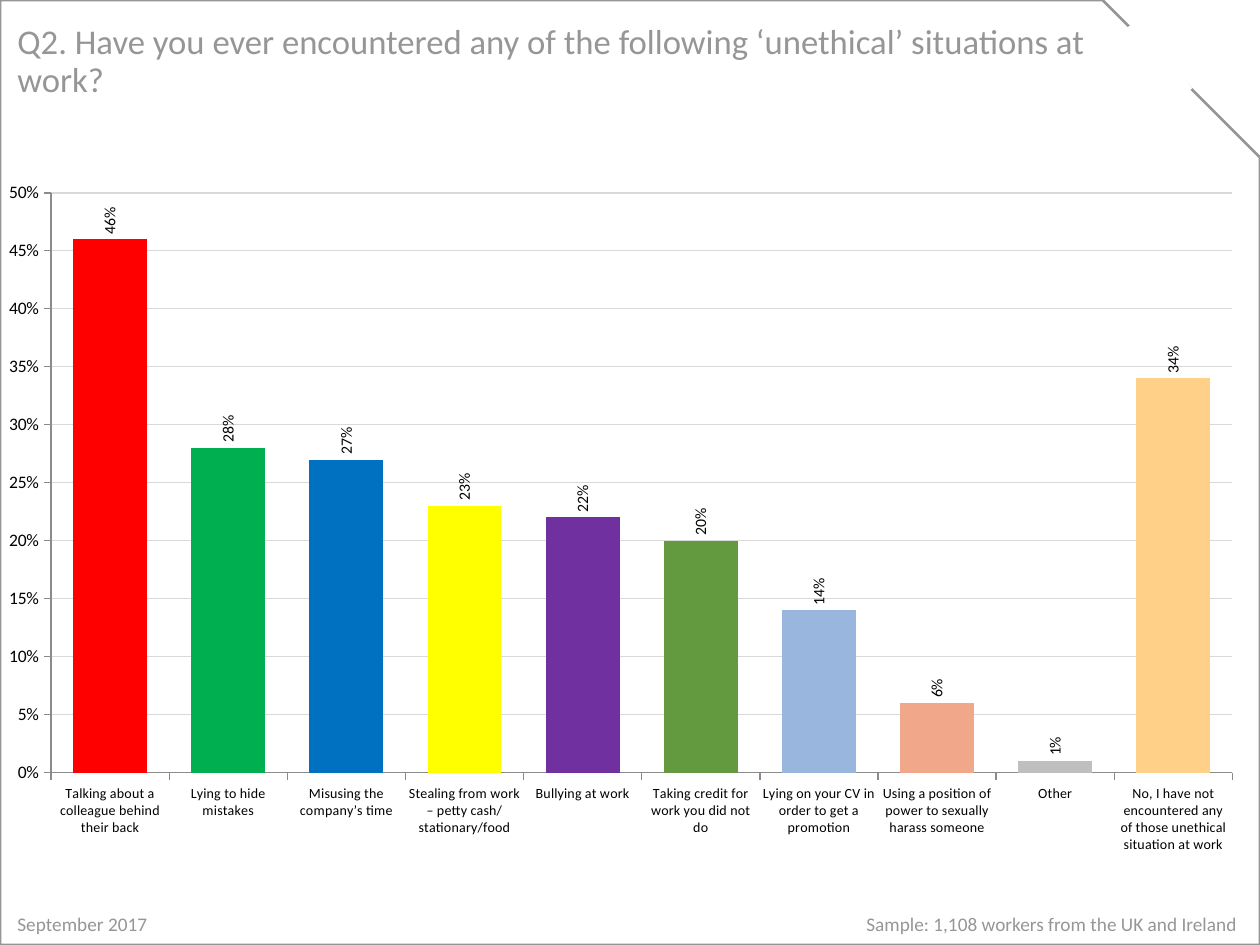
"""Build the survey slide on unethical situations at work."""
from lxml import etree
from pptx import Presentation
from pptx import util as u
from pptx.chart.data import CategoryChartData
from pptx.dml.color import RGBColor
from pptx.enum import chart as ch, shapes, text
from pptx.oxml import parse_xml
from pptx.oxml.ns import nsdecls, qn

FONT = "Calibri"
GREY = "969696"
RESULTS = [
    ("Talking about a colleague behind their back", 0.46, "FF0000"),
    ("Lying to hide mistakes", 0.28, "00B050"),
    ("Misusing the company’s time", 0.27, "0070C0"),
    ("Stealing from work – petty cash/stationary/food", 0.23, "FFFF00"),
    ("Bullying at work", 0.22, "7030A0"),
    ("Taking credit for work you did not do", 0.20, "639A3F"),
    ("Lying on your CV in order to get a promotion", 0.14, "99B6DF"),
    ("Using a position of power to sexually harass someone", 0.06, "F1A78A"),
    ("Other", 0.01, "BFBFBF"),
    ("No, I have not encountered any of those unethical situation at work", 0.34, "FFD088"),
]


def rgb(value):
    return RGBColor.from_string(value)


def box(*lengths):
    return [u.Pt(length) for length in lengths]


def set_font(font, size, color="000000"):
    font.name, font.size, font.bold = FONT, u.Pt(size), False
    font.color.rgb = rgb(color)


def set_line(line, color, width):
    line.color.rgb = rgb(color)
    line.width = u.Pt(width)


def add_text(slide, place, wording, size, anchor, spacing=1.0, tab=None):
    frame = slide.shapes.add_textbox(*box(*place)).text_frame
    frame.word_wrap = True
    frame.vertical_anchor = anchor
    paragraph = frame.paragraphs[0]
    paragraph.line_spacing = spacing
    paragraph.add_run().text = wording
    if tab:
        stops = etree.SubElement(paragraph._p.get_or_add_pPr(), qn("a:tabLst"))
        etree.SubElement(stops, qn("a:tab"), pos=str(u.Pt(tab)), algn="r")
    set_font(paragraph.font, size, GREY)


def add_frame(slide):
    border = slide.shapes.add_shape(shapes.MSO_SHAPE.SNIP_1_RECTANGLE, *box(0, 0, 720, 540))
    border.shadow.inherit = False
    border.fill.background()
    set_line(border.line, GREY, 1.5)


def add_corner_gap(slide):
    gap = slide.shapes.add_connector(
        shapes.MSO_CONNECTOR.STRAIGHT, *box(645.84, 14.4, 679.68, 51.84))
    set_line(gap.line, "FFFFFF", 4.5)
    etree.SubElement(gap._element.spPr, qn("a:effectLst"))


def place_plot(chart, **fractions):
    area = chart._chartSpace.chart.plotArea
    for old in area.findall(qn("c:layout")):
        area.remove(old)
    values = "".join(f'<c:{key} val="{value}"/>' for key, value in fractions.items())
    area.insert(0, parse_xml(
        f'<c:layout {nsdecls("c")}><c:manualLayout><c:layoutTarget val="inner"/>'
        f'<c:xMode val="edge"/><c:yMode val="edge"/>{values}'
        '</c:manualLayout></c:layout>'))


def style_axis(axis, size):
    set_font(axis.tick_labels.font, size)
    axis.major_tick_mark = ch.XL_TICK_MARK.OUTSIDE
    axis.minor_tick_mark = ch.XL_TICK_MARK.NONE
    set_line(axis.format.line, "8B8B8B", 0.75)


def style_bars(plot):
    plot.gap_width = 60
    plot.vary_by_categories = False
    bars = plot.series[0]
    for index, (_, _, color) in enumerate(RESULTS):
        fill = bars.points[index].format.fill
        fill.solid()
        fill.fore_color.rgb = rgb(color)
    labels = bars.data_labels
    labels.show_value = True
    labels.position = ch.XL_LABEL_POSITION.OUTSIDE_END
    labels.number_format, labels.number_format_is_linked = "0%", False
    set_font(labels.font, 9)
    turned = labels._element.find(qn("c:txPr")).find(qn("a:bodyPr"))
    turned.set("rot", "-5400000")
    turned.set("vert", "horz")


def add_results_chart(slide):
    data = CategoryChartData(number_format="0%")
    data.categories = [answer for answer, _, _ in RESULTS]
    data.add_series("Series 1", [share for _, share, _ in RESULTS])
    chart = slide.shapes.add_chart(
        ch.XL_CHART_TYPE.COLUMN_CLUSTERED, *box(2.88, 99.36, 710.64, 418.32), data).chart
    chart.has_legend = chart.has_title = False
    set_font(chart.font, 10)
    style_axis(chart.category_axis, 8)
    shares = chart.value_axis
    style_axis(shares, 10)
    shares.minimum_scale, shares.maximum_scale, shares.major_unit = 0, 0.5, 0.05
    shares.tick_labels.number_format = "0%"
    shares.tick_labels.number_format_is_linked = False
    set_line(shares.major_gridlines.format.line, "D9D9D9", 0.75)
    style_bars(chart.plots[0])
    place_plot(chart, x=0.037, y=0.026, w=0.95, h=0.792)


def main():
    deck = Presentation()
    deck.slide_width, deck.slide_height = box(720, 540)
    slide = deck.slides.add_slide(deck.slide_layouts[6])
    add_text(slide, (2.88, 517.68, 715.68, 20.88),
             "September 2017\tSample: 1,108 workers from the UK and Ireland",
             11, text.MSO_ANCHOR.TOP, tab=697)
    add_frame(slide)
    add_corner_gap(slide)
    add_text(slide, (2.88, 11.52, 634.32, 48.24),
             "Q2. Have you ever encountered any of the following ‘unethical’ situations at work?",
             19.8, text.MSO_ANCHOR.MIDDLE, spacing=0.9)
    add_results_chart(slide)
    deck.save("out.pptx")


if __name__ == "__main__":
    main()
